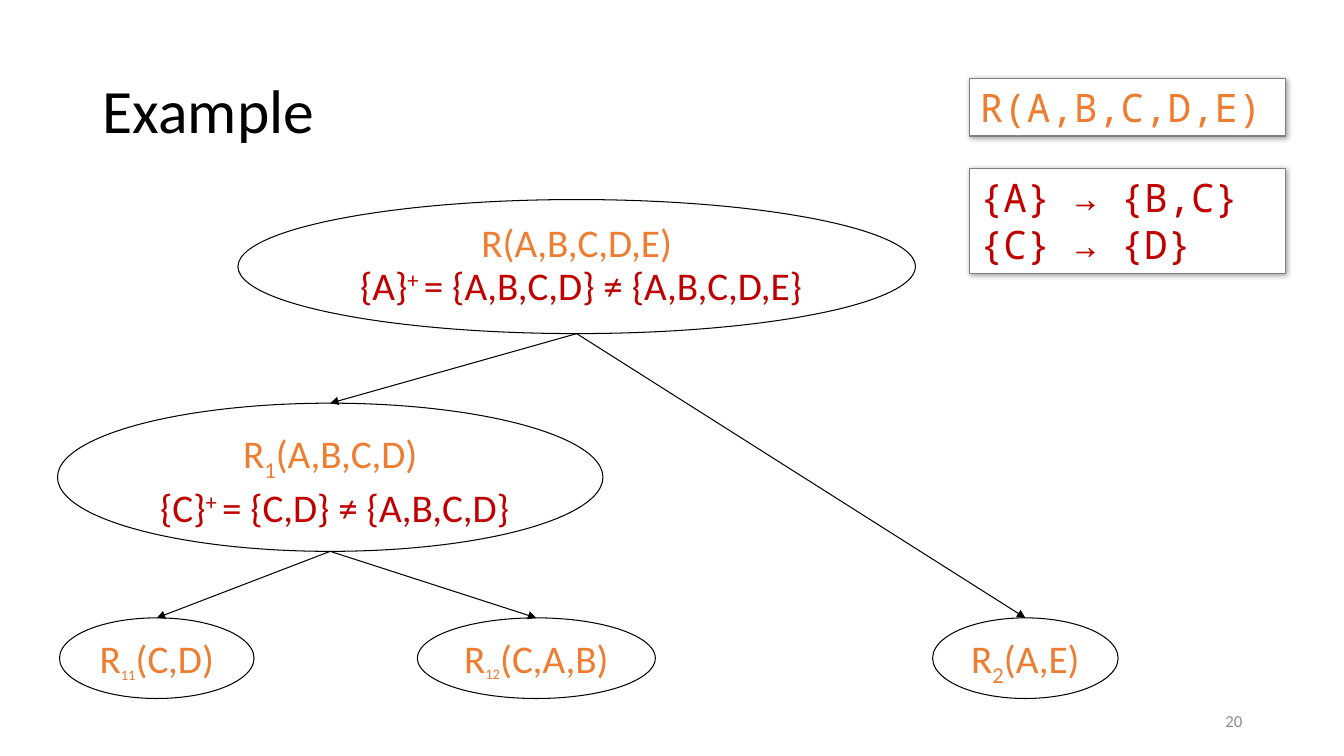
from pptx import Presentation
from pptx.dml.color import RGBColor
from pptx.enum.shapes import MSO_CONNECTOR, MSO_SHAPE
from pptx.enum.text import MSO_ANCHOR, PP_ALIGN
from pptx.oxml.ns import qn
from pptx.util import Emu, Pt
from lxml.etree import SubElement

PX = 9144  # EMU per px, 100 px to the inch
COLOURS = {
    "ink": "000000",
    "paper": "FFFFFF",
    "border": "808080",
    "number": "8C8C8C",
    "relation": "ED7D31",
    "dependency": "C00000",
}
SUPER, SUB = 30, -25


def colour(name):
    return RGBColor.from_string(COLOURS[name])


def place(*lengths):
    return [Emu(length * PX) for length in lengths]


def style_line(line, name):
    line.color.rgb = colour(name)
    line.width = Pt(0.75)


def add_span(para, text, name, baseline=0, size=None):
    span = para.add_run()
    span.text = text
    span.font.color.rgb = colour(name)
    if size:
        span.font.size = Pt(size)
    if baseline:
        span.font._element.set("baseline", str(baseline * 1000))


def format_para(para, size, font="Calibri", align=PP_ALIGN.LEFT, spacing=None):
    para.font.name = font
    para.font.size = Pt(size)
    para.alignment = align
    para.line_spacing = spacing


def add_label(page, bounds, text, size, name, align=PP_ALIGN.LEFT, spacing=None):
    frame = page.shapes.add_textbox(*place(*bounds)).text_frame
    frame.word_wrap = True
    frame.vertical_anchor = MSO_ANCHOR.MIDDLE
    para = frame.paragraphs[0]
    format_para(para, size, align=align, spacing=spacing)
    add_span(para, text, name)


def add_node(page, bounds, lines, anchor=MSO_ANCHOR.TOP, spacing=None):
    """Draw an ellipse; each line is a list of spans."""
    node = page.shapes.add_shape(MSO_SHAPE.OVAL, *place(*bounds))
    node.shadow.inherit = False
    node.fill.background()
    style_line(node.line, "ink")
    frame = node.text_frame
    frame.word_wrap = False
    frame.vertical_anchor = anchor
    para = frame.paragraphs[0]
    format_para(para, 28, align=PP_ALIGN.CENTER, spacing=spacing)
    for index, spans in enumerate(lines):
        if index:
            para.add_line_break()
        for span in spans:
            add_span(para, *span)
    return node


def relation(subscript, attributes, size=None):
    return [("R", "relation"), (subscript, "relation", SUB, size),
            (attributes, "relation")]


def closure(start, result):
    return [(f" {start}", "dependency"), ("+ ", "dependency", SUPER),
            (f"= {result}", "dependency")]


def add_arrow(page, parent, child):
    """Join the bottom of the parent to the top of the child."""
    arrow = page.shapes.add_connector(
        MSO_CONNECTOR.STRAIGHT,
        parent.left + parent.width // 2, parent.top + parent.height,
        child.left + child.width // 2, child.top)
    style_line(arrow.line, "ink")
    SubElement(arrow.line._get_or_add_ln(), qn("a:tailEnd"), type="triangle")
    SubElement(arrow._element.spPr, qn("a:effectLst"))


def add_shadow(box):
    box.shadow.inherit = False
    effects = box._element.spPr.find(qn("a:effectLst"))
    shadow = SubElement(effects, qn("a:outerShdw"), blurRad=str(Pt(4)),
                        dist=str(Pt(1)), dir="2700000", algn="tl", rotWithShape="0")
    black = SubElement(shadow, qn("a:srgbClr"), val=COLOURS["ink"])
    SubElement(black, qn("a:alpha"), val="40000")


def add_code_box(page, bounds, lines, name):
    box = page.shapes.add_shape(MSO_SHAPE.RECTANGLE, *place(*bounds))
    box.fill.solid()
    box.fill.fore_color.rgb = colour("paper")
    style_line(box.line, name="border")
    add_shadow(box)
    frame = box.text_frame
    frame.word_wrap = True
    frame.vertical_anchor = MSO_ANCHOR.TOP
    for index, text in enumerate(lines):
        para = frame.add_paragraph() if index else frame.paragraphs[0]
        format_para(para, 28, font="Noto Sans Mono")
        add_span(para, text, name)


def main():
    deck = Presentation()
    deck.slide_width, deck.slide_height = place(1333, 750)
    page = deck.slides.add_slide(deck.slide_layouts[6])

    # Slide number and title
    add_label(page, (942, 695, 300, 40), "20", 12, "number", align=PP_ALIGN.RIGHT)
    add_label(page, (92, 40, 1150, 145), "Example", 44, "ink", spacing=0.9)

    # Decomposition tree
    root = add_node(page, (236, 198, 672, 133), [
        [("R(A,B,C,D,E)", "relation")],
        closure("{A}", "{A,B,C,D} ≠ {A,B,C,D,E}")], spacing=0.9)
    r1 = add_node(page, (57, 400, 541, 147), [
        relation("1", "(A,B,C,D)"),
        closure("{C}", "{C,D} ≠ {A,B,C,D}")])
    r2 = add_node(page, (925, 613, 184, 80), [relation("2", "(A,E)")])
    r11 = add_node(page, (59, 613, 193, 80), [relation("11", "(C,D)", 18)])
    r12 = add_node(page, (414, 613, 236, 80), [relation("12", "(C,A,B)", 18)],
                   anchor=MSO_ANCHOR.MIDDLE)
    for parent, child in ((root, r1), (root, r2), (r1, r11), (r1, r12)):
        add_arrow(page, parent, child)

    # Schema and its functional dependencies
    add_code_box(page, (962, 78, 313, 57), ["R(A,B,C,D,E)"], "relation")
    add_code_box(page, (962, 167, 313, 104), ["{A} → {B,C}", "{C} → {D}"],
                 "dependency")

    deck.save("out.pptx")


if __name__ == "__main__":
    main()
